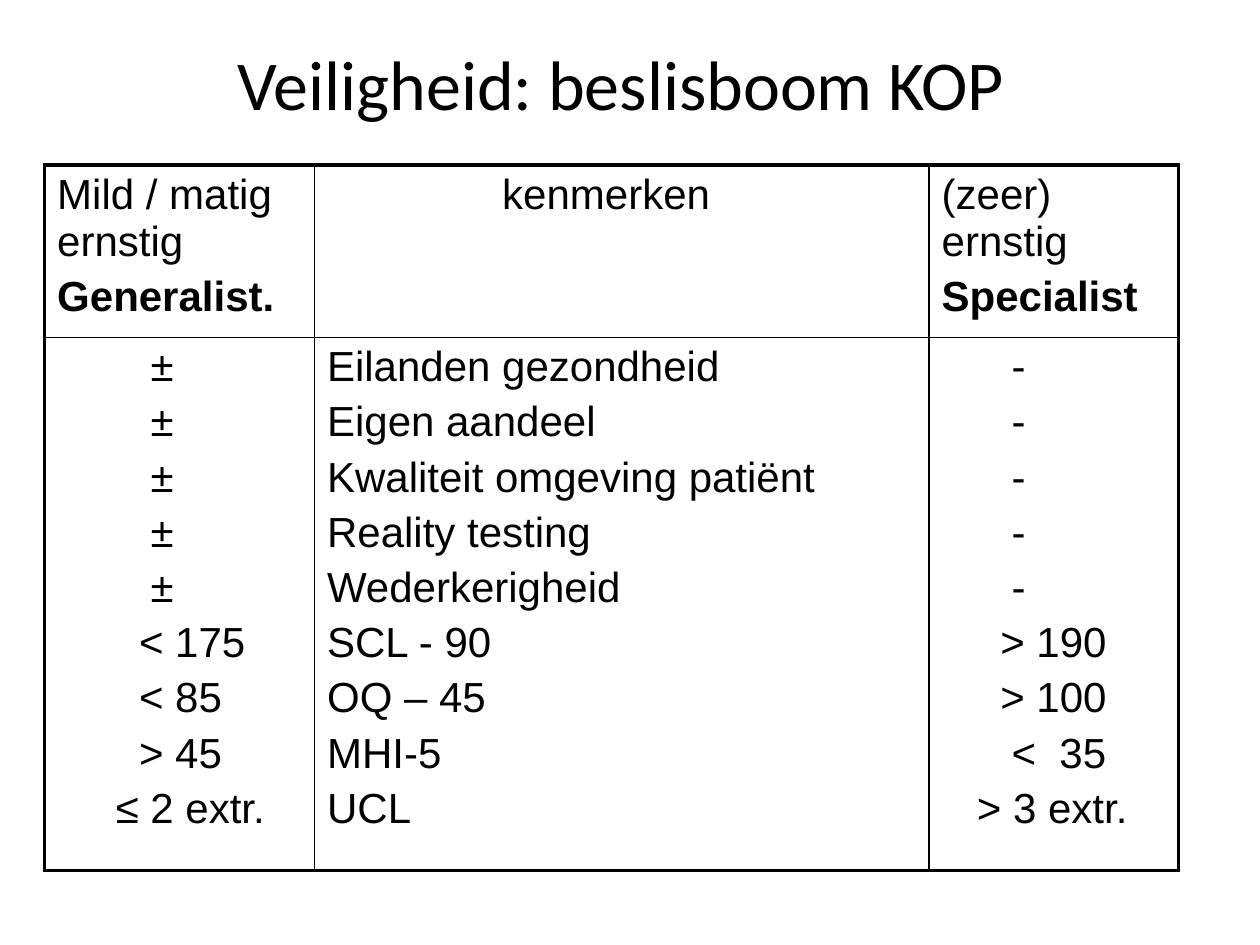
import dataclasses

import pptx
import pptx.dml.color
import pptx.enum.text
import pptx.oxml.ns
import pptx.util
from lxml import etree
from pptx.util import Cm, Pt


@dataclasses.dataclass(frozen=True)
class Theme:
    ink: str = "000000"
    title_font: str = "Calibri"
    title_size: int = 40
    body_font: str = "Arial"
    body_size: int = 24
    space_before: int = 20  # percent of the line
    frame_width: float = 2.25
    rule_width: float = 1


THEME = Theme()

TITLE = "Veiligheid: beslisboom KOP"
COLUMN_WIDTHS = (5.44, 12.39, 5.03)
ROW_HEIGHTS = (2.29, 9.98)

# Each line of a cell: text, left indent in cm, bold
HEADINGS = (
    [("Mild / matig ernstig", 0, False), ("Generalist.", 0, True)],
    [("kenmerken", 3.53, False)],
    [("(zeer) ernstig", 0, False), ("Specialist", 0, True)],
)
CRITERIA = (
    [("±", 1.88, False)] * 5
    + [("< 175", 1.65, False), ("< 85", 1.65, False),
       ("> 45", 1.65, False), ("≤ 2 extr.", 1.18, False)],
    [(feature, 0, False) for feature in (
        "Eilanden gezondheid", "Eigen aandeel", "Kwaliteit omgeving patiënt",
        "Reality testing", "Wederkerigheid", "SCL - 90", "OQ – 45", "MHI-5", "UCL")],
    [("-", 1.41, False)] * 5
    + [("> 190", 1.18, False), ("> 100", 1.18, False),
       ("<  35", 1.41, False), ("> 3 extr.", 0.71, False)],
)


def add_element(parent, tag, **attributes):
    element = etree.SubElement(parent, pptx.oxml.ns.qn(tag))
    for name, value in attributes.items():
        element.set(name, str(value))
    return element


def write_run(paragraph, text, **font_format):
    run = paragraph.add_run()
    run.text = text
    for name, value in font_format.items():
        setattr(run.font, name, value)
    run.font.color.rgb = pptx.dml.color.RGBColor.from_string(THEME.ink)


def fill_cell(cell, lines):
    cell.fill.background()
    for number, (text, indent, bold) in enumerate(lines):
        frame = cell.text_frame
        paragraph = frame.add_paragraph() if number else frame.paragraphs[0]
        properties = paragraph._p.get_or_add_pPr()
        properties.set("marL", str(Cm(indent)))
        properties.set("indent", "0")
        spacing = add_element(properties, "a:spcBef")
        add_element(spacing, "a:spcPct", val=THEME.space_before * 1000)
        write_run(paragraph, text, name=THEME.body_font,
                  size=Pt(THEME.body_size), bold=bold)


def border_cell(cell, outer_sides):
    properties = cell._tc.get_or_add_tcPr()
    for position, (side, is_outer) in enumerate(outer_sides.items()):
        width = THEME.frame_width if is_outer else THEME.rule_width
        line = etree.Element(pptx.oxml.ns.qn(f"a:ln{side}"), w=str(Pt(width)))
        fill = add_element(line, "a:solidFill")
        add_element(fill, "a:srgbClr", val=THEME.ink)
        properties.insert(position, line)  # borders come before the fill


def add_title(slide, left, top, width, height):
    box = slide.shapes.add_textbox(Cm(left), Cm(top), Cm(width), Cm(height))
    frame = box.text_frame
    frame.word_wrap = True
    frame.vertical_anchor = pptx.enum.text.MSO_ANCHOR.MIDDLE
    heading = frame.paragraphs[0]
    heading.alignment = pptx.enum.text.PP_ALIGN.CENTER
    write_run(heading, TITLE, name=THEME.title_font, size=Pt(THEME.title_size))


def add_decision_table(slide, left, top):
    content = (HEADINGS, CRITERIA)
    last_row, last_column = len(ROW_HEIGHTS) - 1, len(COLUMN_WIDTHS) - 1
    table = slide.shapes.add_table(
        len(ROW_HEIGHTS), len(COLUMN_WIDTHS), Cm(left), Cm(top),
        Cm(sum(COLUMN_WIDTHS)), Cm(sum(ROW_HEIGHTS))).table
    table.first_row = table.horz_banding = False
    for column, width in zip(table.columns, COLUMN_WIDTHS):
        column.width = Cm(width)
    for r, height in enumerate(ROW_HEIGHTS):
        table.rows[r].height = Cm(height)
        for c, lines in enumerate(content[r]):
            cell = table.cell(r, c)
            fill_cell(cell, lines)
            border_cell(cell, {"L": c == 0, "R": c == last_column,
                               "T": r == 0, "B": r == last_row})


def main():
    presentation = pptx.Presentation()
    presentation.slide_width, presentation.slide_height = Cm(25.4), Cm(19.05)
    slide = presentation.slides.add_slide(presentation.slide_layouts[6])
    add_title(slide, 1.09, 0.08, 22.86, 3.18)
    add_decision_table(slide, 0.9, 3.33)
    presentation.save("out.pptx")


if __name__ == "__main__":
    main()
